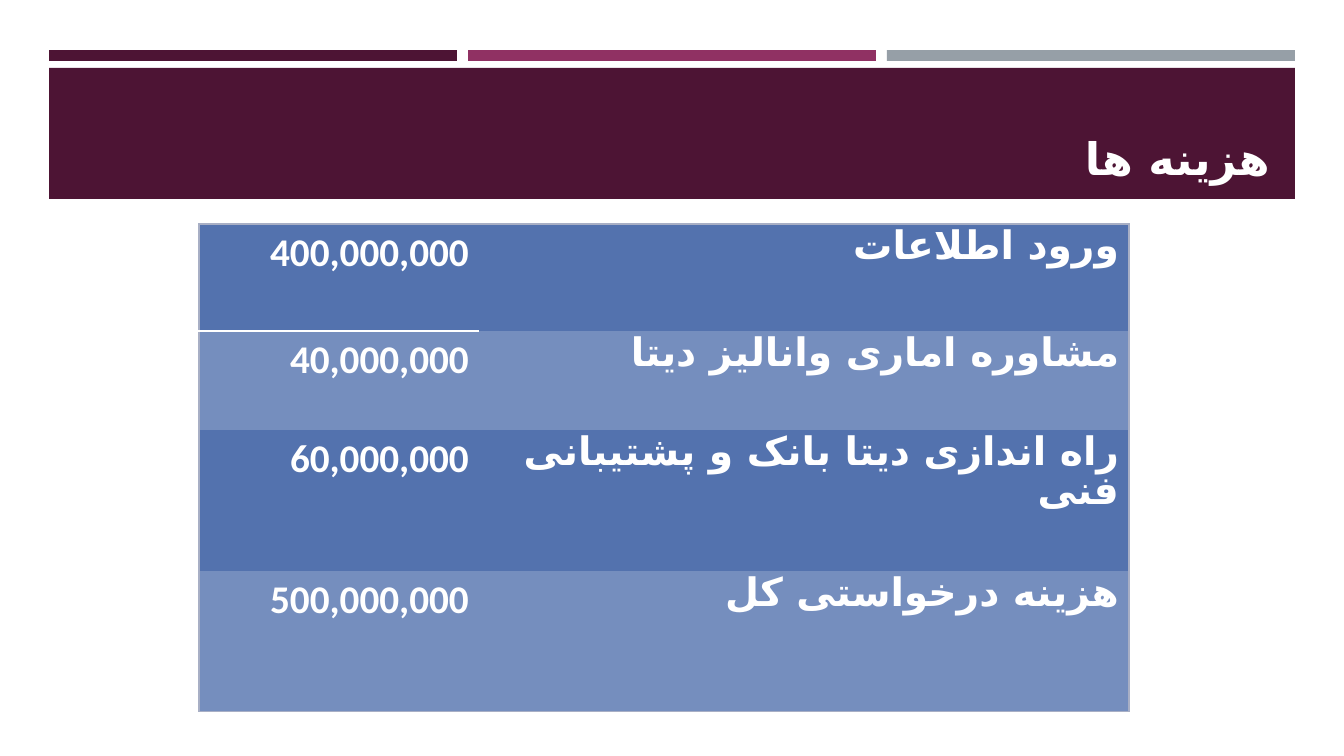
from lxml import etree
from pptx import Presentation
from pptx.dml.color import RGBColor
from pptx.enum.shapes import MSO_SHAPE
from pptx.enum.text import MSO_ANCHOR, MSO_AUTO_SIZE, PP_ALIGN
from pptx.oxml.ns import qn
from pptx.util import Emu, Pt

RECT = MSO_SHAPE.RECTANGLE
RIGHT = PP_ALIGN.RIGHT
BOTTOM = MSO_ANCHOR.BOTTOM
NO_AUTOFIT = MSO_AUTO_SIZE.NONE

PLUM = RGBColor(0x4D, 0x14, 0x34)
MAGENTA = RGBColor(0x90, 0x31, 0x63)
GREY = RGBColor(0x96, 0x9F, 0xA7)
BLUE = RGBColor(0x53, 0x72, 0xAE)
LIGHT_BLUE = RGBColor(0x75, 0x8E, 0xBE)
EDGE = RGBColor(0xA8, 0xAF, 0xC5)
WHITE = RGBColor(0xFF, 0xFF, 0xFF)

FONT = "Calibri"
PERSIAN_FONT = "DejaVu Sans"
TITLE = "هزینه ها"
COSTS = [
    ("400,000,000", "ورود اطلاعات"),
    ("40,000,000", "مشاوره اماری وانالیز دیتا"),
    ("60,000,000", "راه اندازی دیتا بانک و پشتیبانی فنی"),
    ("500,000,000", "هزینه درخواستی کل"),
]
COL_WIDTHS = [280, 650]
ROW_HEIGHTS = [107, 99, 141, 141]


def px(n):
    return Emu(round(n * 914400 / 100.8))


def add_bar(s, x, y, w, h, color):
    bar = s.shapes.add_shape(RECT, px(x), px(y), px(w), px(h))
    bar.shadow.inherit = False
    bar.fill.solid()
    bar.fill.fore_color.rgb = color
    bar.line.fill.background()


def format_text(tf, size, spacing=1.0):
    p = tf.paragraphs[0]
    p.alignment = RIGHT
    p.line_spacing = spacing
    r = p.runs[0]
    font = r.font
    font.name, font.size, font.bold = FONT, Pt(size), True
    font.color.rgb = WHITE
    # Typeface for the Persian letters
    etree.SubElement(r._r.get_or_add_rPr(), qn("a:cs"), typeface=PERSIAN_FONT)


def set_title(s, text):
    title = s.shapes.title
    title.left, title.top, title.width, title.height = px(65), px(78), px(1215), px(112)
    tf = title.text_frame
    tf.text = text
    tf.word_wrap = True
    tf.auto_size = NO_AUTOFIT
    tf.vertical_anchor = BOTTOM
    format_text(tf, 32)


def set_borders(cell, borders):
    """Give each side its (colour, points) line; sides left out get none."""
    tcPr = cell._tc.get_or_add_tcPr()
    for i, side in enumerate("LRTB"):
        ln = etree.Element(qn(f"a:ln{side}"))
        if side in borders:
            color, width = borders[side]
            ln.set("w", str(Pt(width)))
            fill = etree.SubElement(ln, qn("a:solidFill"))
            etree.SubElement(fill, qn("a:srgbClr"), val=str(color))
        else:
            etree.SubElement(ln, qn("a:noFill"))
        tcPr.insert(i, ln)


def cell_borders(row, col):
    edge = (EDGE, 1)
    borders = {"L" if col == 0 else "R": edge}
    if row == 0:
        borders["T"] = edge
    if row == len(COSTS) - 1:
        borders["B"] = edge
    # White rule between the first two amounts
    if col == 0 and row < 2:
        borders["B" if row == 0 else "T"] = (WHITE, 2)
    return borders


def add_cost_table(s, x, y):
    frame = s.shapes.add_table(len(COSTS), len(COL_WIDTHS), px(x), px(y),
                               px(sum(COL_WIDTHS)), px(sum(ROW_HEIGHTS)))
    table = frame.table
    table.first_row = table.horz_banding = False
    for column, width in zip(table.columns, COL_WIDTHS):
        column.width = px(width)
    for i, (row, height) in enumerate(zip(table.rows, ROW_HEIGHTS)):
        row.height = px(height)
        for j, cell in enumerate(row.cells):
            cell.text = COSTS[i][j]
            # Persian labels are set tighter than the amounts
            format_text(cell.text_frame, 28, 0.85 if j else 1.0)
            cell.fill.solid()
            cell.fill.fore_color.rgb = LIGHT_BLUE if i % 2 else BLUE
            set_borders(cell, cell_borders(i, j))


def main():
    prs = Presentation()
    prs.slide_width, prs.slide_height = px(1344), px(756)
    s = prs.slides.add_slide(prs.slide_layouts[5])

    # Colour strips and title band
    for i, color in enumerate([PLUM, MAGENTA, GREY]):
        add_bar(s, 49 + 419 * i, 50, 408, 11, color)
    add_bar(s, 49, 68, 1246, 131, PLUM)

    # Title, brought in front of the band
    set_title(s, TITLE)
    s.shapes.title.element.getparent().append(s.shapes.title.element)

    # Costs
    add_cost_table(s, 199, 224)

    prs.save("out.pptx")


if __name__ == "__main__":
    main()
